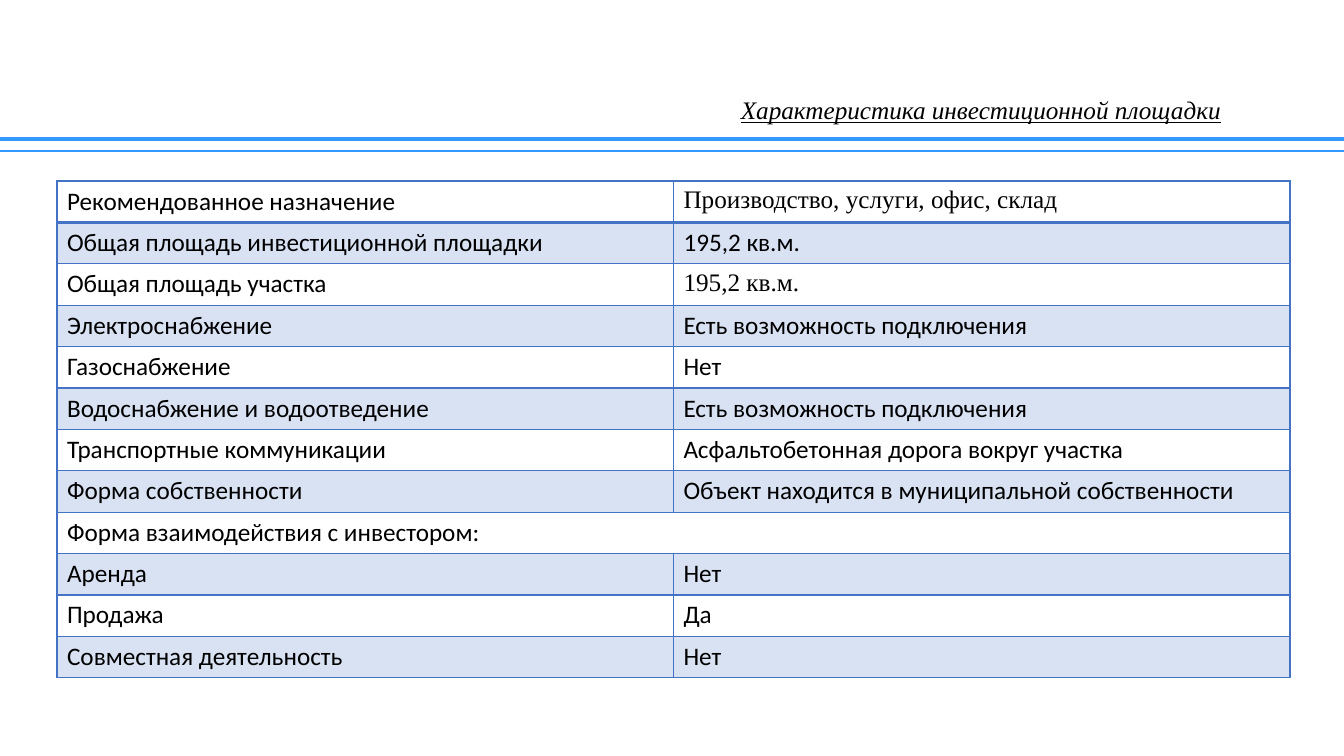
from lxml import etree
from pptx import Presentation
from pptx.dml.color import RGBColor
from pptx.enum.shapes import MSO_CONNECTOR
from pptx.enum.text import MSO_ANCHOR, PP_ALIGN
from pptx.oxml.ns import qn
from pptx.util import Emu, Pt

PAGE_W, PAGE_H = 1344, 756
SCALE = 12192000 / PAGE_W

STRAIGHT = MSO_CONNECTOR.STRAIGHT
MIDDLE = MSO_ANCHOR.MIDDLE
CENTER = PP_ALIGN.CENTER

BLACK = RGBColor(0x00, 0x00, 0x00)
RULE_BLUE = RGBColor(0x33, 0x99, 0xFF)
TABLE_BLUE = RGBColor(0x44, 0x72, 0xC4)

SANS, SERIF = "Calibri", "Times New Roman"

TITLE = "Характеристика инвестиционной площадки"
# Label, value (None where the label spans the row), value font
ROWS = [
    ("Рекомендованное назначение", "Производство, услуги, офис, склад", SERIF),
    ("Общая площадь инвестиционной площадки", "195,2 кв.м.", SANS),
    ("Общая площадь участка", "195,2 кв.м.", SERIF),
    ("Электроснабжение", "Есть возможность подключения", SANS),
    ("Газоснабжение", "Нет", SANS),
    ("Водоснабжение и водоотведение", "Есть возможность подключения", SANS),
    ("Транспортные коммуникации", "Асфальтобетонная дорога вокруг участка", SANS),
    ("Форма собственности", "Объект находится в муниципальной собственности", SANS),
    ("Форма взаимодействия с инвестором:", None, SANS),
    ("Аренда", "Нет", SANS),
    ("Продажа", "Да", SANS),
    ("Совместная деятельность", "Нет", SANS),
]


def px(length):
    return Emu(round(length * SCALE))


def set_font(para, name):
    para.font.name = name
    para.font.size = Pt(18)
    para.font.color.rgb = BLACK


def add_title(page, left, top, width, height):
    box = page.shapes.add_textbox(px(left), px(top), px(width), px(height))
    frame = box.text_frame
    frame.word_wrap = True
    frame.vertical_anchor = MIDDLE
    para = frame.paragraphs[0]
    para.text = TITLE
    para.alignment = CENTER
    para.line_spacing = 0.9
    set_font(para, SERIF)
    para.font.italic = True
    para.font.underline = True


def add_rules(page, left, top, width, gap):
    for y, weight in ((top, 3.5), (top + gap, 1.5)):
        rule = page.shapes.add_connector(
            STRAIGHT, px(left), px(y), px(left + width), px(y))
        rule.line.color.rgb = RULE_BLUE
        rule.line.width = Pt(weight)
        etree.SubElement(rule._element.spPr, qn("a:effectLst"))


def set_borders(cell, bottom):
    properties = cell._tc.get_or_add_tcPr()
    for side, weight in (("L", 1), ("R", 1), ("T", 1), ("B", bottom)):
        line = etree.SubElement(properties, qn("a:ln" + side), w=str(Pt(weight)))
        fill = etree.SubElement(line, qn("a:solidFill"))
        etree.SubElement(fill, qn("a:srgbClr"), val=str(TABLE_BLUE))


def set_fill(cell, banded):
    if not banded:
        cell.fill.background()
        return
    cell.fill.solid()
    cell.fill.fore_color.rgb = TABLE_BLUE
    color = cell._tc.tcPr.find(qn("a:solidFill")).find(qn("a:srgbClr"))
    etree.SubElement(color, qn("a:alpha"), val="20000")


def add_site_table(page, left, top, width, height):
    frame = page.shapes.add_table(
        len(ROWS), 2, px(left), px(top), px(width), px(height))
    table = frame.table
    table.first_row = False
    table.horz_banding = False
    for index, (label, value, value_font) in enumerate(ROWS):
        for column, (text, font) in enumerate(((label, SANS), (value, value_font))):
            cell = table.cell(index, column)
            set_borders(cell, bottom=2 if index == 0 else 1)
            set_fill(cell, banded=index % 2 == 1)
            para = cell.text_frame.paragraphs[0]
            para.text = text or ""
            set_font(para, font)
        if value is None:
            table.cell(index, 0).merge(table.cell(index, 1))


def main():
    deck = Presentation()
    deck.slide_width, deck.slide_height = px(PAGE_W), px(PAGE_H)
    page = deck.slides.add_slide(deck.slide_layouts[6])
    add_rules(page, 0, 139, PAGE_W, 12)
    add_title(page, 672, 98, 618, 27)
    add_site_table(page, 57, 181, 1233, 497)
    deck.save("out.pptx")


if __name__ == "__main__":
    main()
